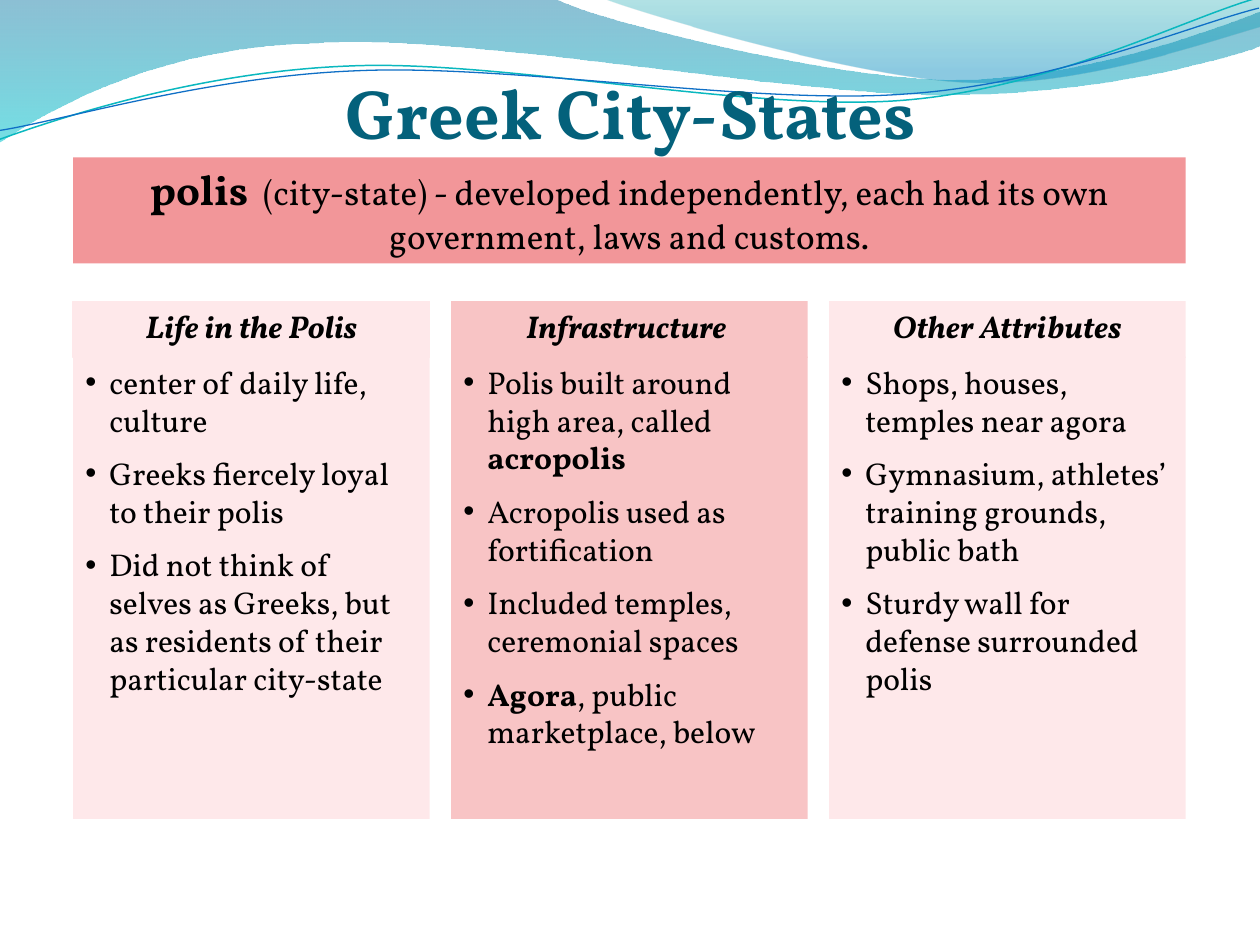
from lxml import etree
from pptx import Presentation
from pptx.dml.color import RGBColor
from pptx.enum.shapes import MSO_SHAPE
from pptx.enum.text import MSO_ANCHOR, PP_ALIGN
from pptx.oxml.ns import qn
from pptx.util import Inches, Pt

COLORS = {"title": "04617B", "text": "000000", "banner": "F29699",
          "light": "FEE8EA", "mid": "F8C4C5", "teal": "0AB8BF", "blue": "0F6FC6"}
FONT = "Vollkorn"


def add_curve(s, start, segments, closed):
    """Outline from line ends (2 numbers) and cubic curves (6 numbers)."""
    points = [(seg[i] * 100, seg[i + 1] * 100) for seg in segments for i in range(0, len(seg), 2)]
    builder = s.shapes.build_freeform(start[0] * 100, start[1] * 100, scale=Inches(0.01))
    builder.add_line_segments(points, close=closed)
    sp = builder.convert_to_shape()
    sp.shadow.inherit = False
    # Join each three control points into one cubic curve
    steps = iter(list(sp._element.iter(qn("a:lnTo"))))
    for seg in segments:
        first = next(steps)
        if len(seg) == 6:
            curve = etree.Element(qn("a:cubicBezTo"))
            first.addprevious(curve)
            for step in (first, next(steps), next(steps)):
                curve.append(step[0])
                step.getparent().remove(step)
    return sp


def add_box(s, x, y, w, h, color, paragraphs, size=18, after=9, bullet=False):
    """Filled rectangle; each paragraph is a list of (text, bold, size) runs."""
    sp = s.shapes.add_shape(MSO_SHAPE.RECTANGLE, Inches(x), Inches(y), Inches(w), Inches(h))
    sp.shadow.inherit = False
    sp.fill.solid()
    sp.fill.fore_color.rgb = RGBColor.from_string(COLORS[color])
    sp.line.fill.background()
    tf = sp.text_frame
    tf.word_wrap = True
    tf.vertical_anchor = MSO_ANCHOR.TOP
    for i, runs in enumerate(paragraphs):
        p = tf.add_paragraph() if i else tf.paragraphs[0]
        p.alignment = PP_ALIGN.LEFT if bullet else PP_ALIGN.CENTER
        p.space_after = Pt(after)
        p.font.name, p.font.size = FONT, Pt(size)
        p.font.color.rgb = RGBColor.from_string(COLORS["text"])
        for text, bold, run_size in runs:
            r = p.add_run()
            r.text = text
            r.font.bold = bold
            if run_size != size:
                r.font.size = Pt(run_size)
        if bullet:
            pPr = p._p.get_or_add_pPr()
            pPr.set("marL", str(Inches(0.19)))
            pPr.set("indent", str(-Inches(0.19)))
            bu_font = etree.Element(qn("a:buFont"), typeface="Arial")
            bu_char = etree.Element(qn("a:buChar"), char="•")
            pPr.find(qn("a:defRPr")).addprevious(bu_font)
            bu_font.addnext(bu_char)
    return sp


prs = Presentation()
prs.slide_width, prs.slide_height = Inches(10), Inches(7.5)
s = prs.slides.add_slide(prs.slide_layouts[5])

# Translucent waves: start, segments, gradient stops (position, colour, opacity)
waves = [
    ((0, 0), [(4.4, -0.01), (4.76, 0.17, 6.64, 0.63, 7.58, 0.63),
              (8.53, 0.63, 9.58, 0.26, 10, 0.09), (10.01, 0.36),
              (9.83, 0.44, 8.7, 0.76, 7.46, 0.75), (6.22, 0.75, 3.82, 0.28, 2.57, 0.34),
              (1.29, 0.36, 0.46, 0.83, -0.01, 1.13)],
     [(0, "0074A1", 45), (1, "00C6CF", 55)]),
    ((4.79, -0.01), [(5.09, 0.11, 6.82, 0.62, 7.69, 0.65),
                     (8.56, 0.69, 9.61, 0.32, 10, 0.21), (10, 0)],
     [(0, "00A1A9", 30), (0.8, "008BBF", 45)]),
]
for start, segments, stops in waves:
    sp = add_curve(s, start, segments, True)
    sp.line.fill.background()
    sp.fill.gradient()
    sp.fill.gradient_angle = 270
    for stop, (position, color, _) in zip(sp.fill.gradient_stops, stops):
        stop.position = position
        stop.color.rgb = RGBColor.from_string(color)
    for clr, (_, _, opacity) in zip(sp._element.spPr.iter(qn("a:srgbClr")), stops):
        etree.SubElement(clr, qn("a:alpha"), val=str(opacity * 1000))

# Thin wave lines, slightly turned
wave_lines = [
    ((-0.02, 0.87), [(0.47, 0.72, 1.58, 0.41, 2.77, 0.42), (3.96, 0.42, 5.91, 0.93, 7.12, 0.9),
                     (8.32, 0.87, 9.4, 0.36, 10, 0.22)], "teal", 0.85),
    ((-0.02, 0.8), [(0.46, 0.75, 1.64, 0.45, 2.83, 0.46), (4.04, 0.46, 5.96, 0.88, 7.16, 0.85),
                    (8.35, 0.83, 9.42, 0.42, 10.01, 0.3)], "blue", 0.75),
]
for start, segments, color, width in wave_lines:
    sp = add_curve(s, start, segments, False)
    sp.rotation = 357.3
    sp.fill.background()
    sp.line.color.rgb = RGBColor.from_string(COLORS[color])
    sp.line.width = Pt(width)

# Definition banner
add_box(s, 0.58, 1.25, 8.83, 0.84, "banner", [[
    ("polis ", True, 24), (" ", False, 18),
    ("(city-state) - developed independently, each had its own government, "
     "laws and customs.", False, 20)]], size=20, after=1)

# Three columns: bulleted body and the heading above it
columns = [
    ("Life in the Polis", "light", [
        [("center of daily life, culture", False, 18)],
        [("Greeks fiercely loyal to their polis", False, 18)],
        [("Did not think of selves as Greeks, but as residents of their "
          "particular city-state", False, 18)]]),
    ("Infrastructure ", "mid", [
        [("Polis built around high area, called ", False, 18), ("acropolis", True, 18)],
        [("Acropolis used as fortification", False, 18)],
        [("Included temples, ceremonial spaces", False, 18)],
        [("Agora", True, 18), (", public marketplace, below", False, 18)]]),
    ("Other Attributes", "light", [
        [("Shops, houses, temples near agora", False, 18)],
        [("Gymnasium, athletes’ training grounds, public bath", False, 18)],
        [("Sturdy wall for defense surrounded polis", False, 18)]]),
]
for i, (heading, color, items) in enumerate(columns):
    x = 0.58 + 3 * i
    add_box(s, x, 2.83, 2.83, 3.67, color, items, bullet=True)
    head = add_box(s, x, 2.39, 2.83, 0.45, color, [[(heading, True, 18)]])
    head.text_frame.paragraphs[0].runs[0].font.italic = True
    if i == 0:
        head.line.color.rgb = RGBColor.from_string(COLORS[color])
        head.line.width = Pt(0.75)

# Title, in front of the waves
title = s.shapes.title
title.left, title.top, title.width, title.height = map(Inches, (0.67, 0.5, 8.67, 0.58))
s.shapes._spTree.append(title._element)
tf = title.text_frame
tf.text = "Greek City-States"
tf.vertical_anchor = MSO_ANCHOR.TOP
p = tf.paragraphs[0]
p.alignment = PP_ALIGN.CENTER
p.font.name, p.font.size, p.font.bold = FONT, Pt(40), True
p.font.color.rgb = RGBColor.from_string(COLORS["title"])

prs.save("out.pptx")
